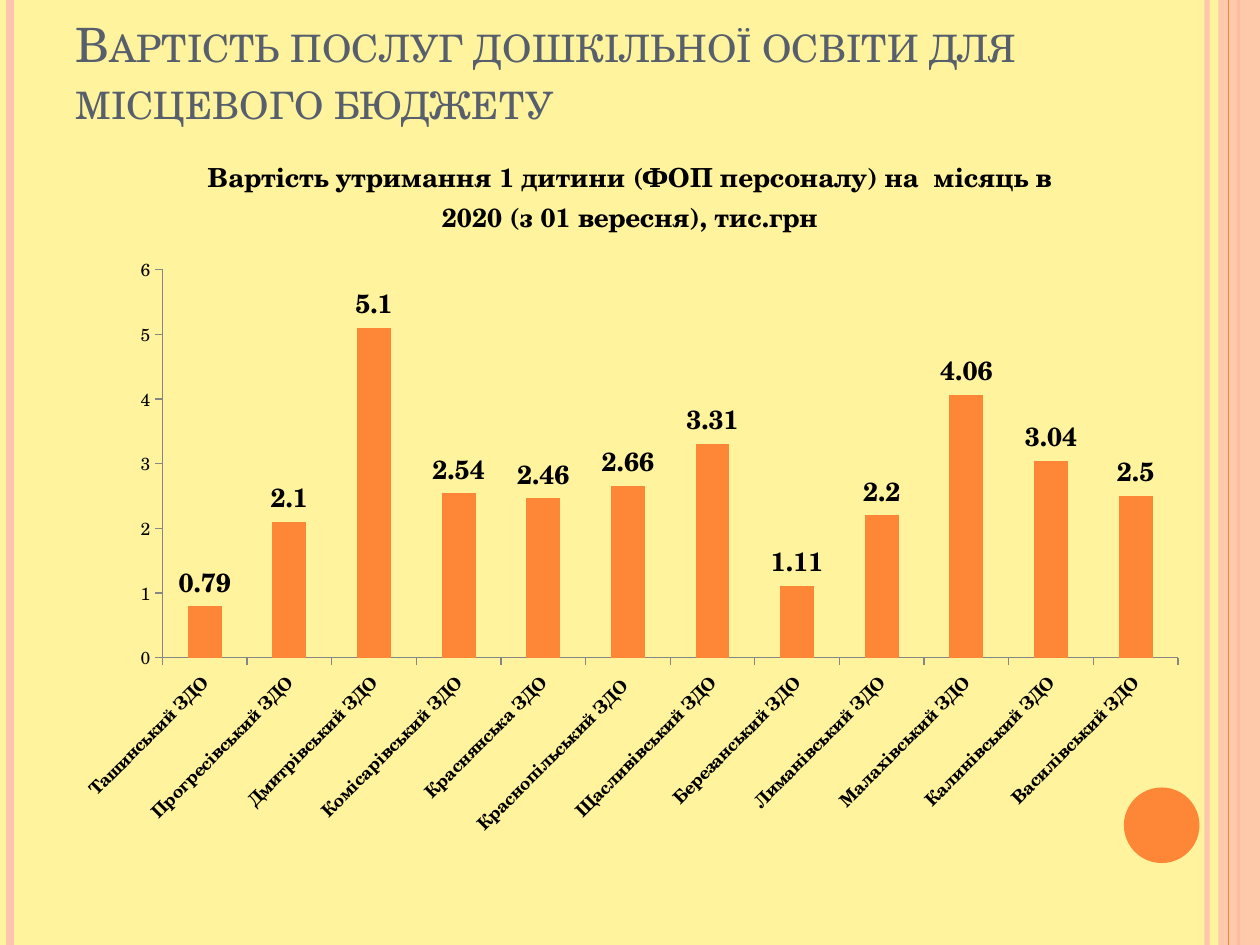
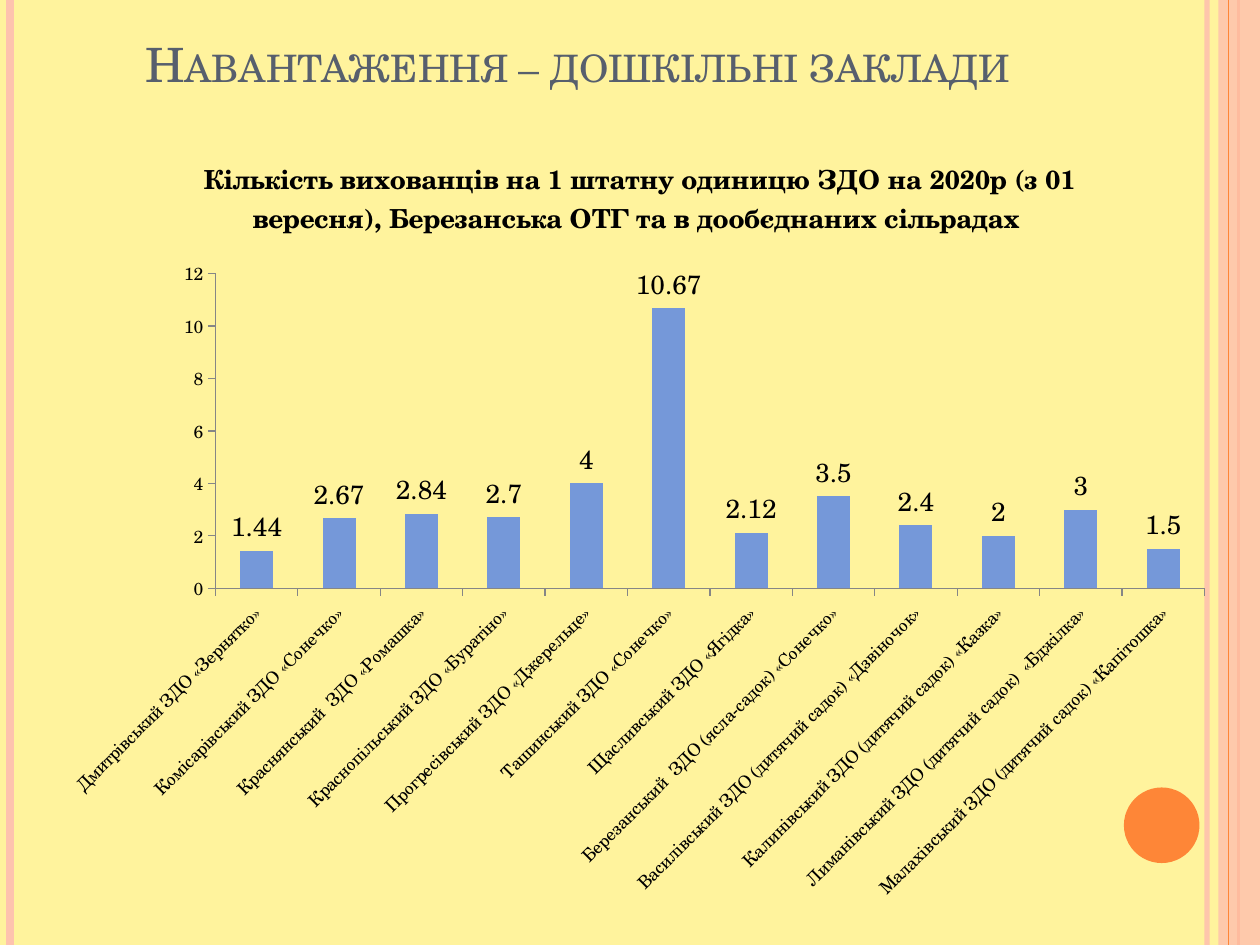
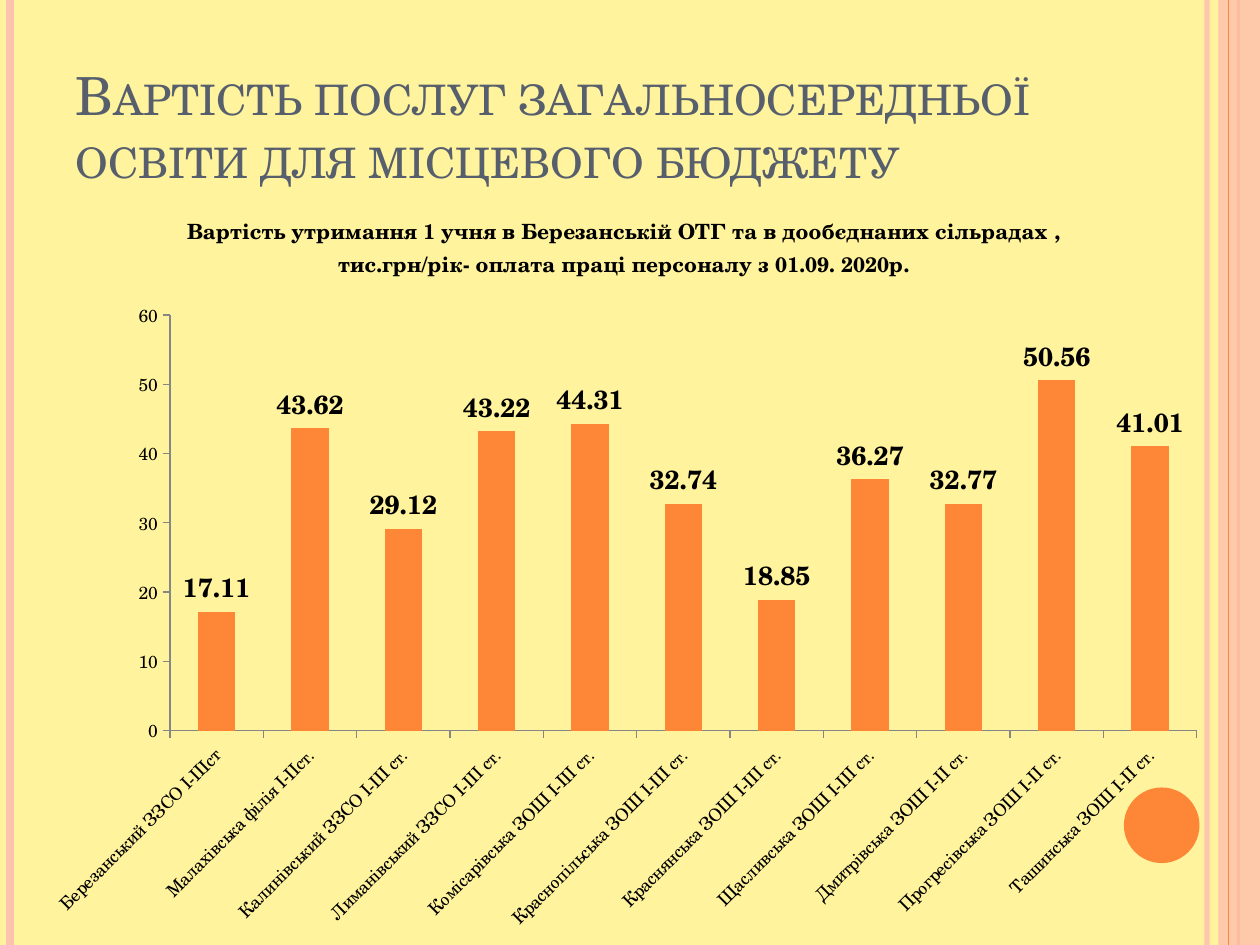
from lxml import etree
from pptx import Presentation
from pptx.chart.data import CategoryChartData
from pptx.dml.color import RGBColor
from pptx.enum.chart import XL_CHART_TYPE, XL_LABEL_POSITION, XL_TICK_MARK
from pptx.enum.shapes import MSO_CONNECTOR, MSO_SHAPE
from pptx.enum.text import MSO_ANCHOR, PP_ALIGN
from pptx.oxml import parse_xml
from pptx.oxml.ns import nsdecls, qn
from pptx.util import Inches, Pt

COLUMN = XL_CHART_TYPE.COLUMN_CLUSTERED
ABOVE = XL_LABEL_POSITION.OUTSIDE_END
TICK = XL_TICK_MARK.OUTSIDE
NONE = XL_TICK_MARK.NONE
LINE = MSO_CONNECTOR.STRAIGHT
RECT = MSO_SHAPE.RECTANGLE
OVAL = MSO_SHAPE.OVAL
BOTTOM = MSO_ANCHOR.BOTTOM
LEFT = PP_ALIGN.LEFT
CENTER = PP_ALIGN.CENTER

FONT = "TeX Gyre Schola"
WIDE, HIGH = 10, 7.5
HUES = {
    "page": "FFF39D",
    "peach": "FEC3AE",
    "orange": "FE8637",
    "blue": "7598D9",
    "title": "575F6D",
    "text": "000000",
    "axis": "868686",
}

COST = {
    "title": "Вартість послуг дошкільної освіти для місцевого бюджету",
    "size": 27, "align": LEFT, "head": (0.5, 0.3, 9.15, 0.77),
    "box": (0.47, 1.02, 9.06, 5.75), "plot": (1.29, 2.14, 8.06, 3.08),
    "name": "Вартість утримання 1 дитини (ФОП персоналу) на  місяць в 2020 (з 01 вересня), тис.грн",
    "name_size": 15, "hue": "orange", "top": 6, "step": 1,
    "bold_cats": True, "bold_vals": True,
    "data": {
        "Ташинський ЗДО": 0.79,
        "Прогресівський ЗДО": 2.1,
        "Дмитрівський ЗДО": 5.1,
        "Комісарівський ЗДО": 2.54,
        "Краснянська ЗДО": 2.46,
        "Краснопільський ЗДО ": 2.66,
        "Щасливівський ЗДО": 3.31,
        "Березанський ЗДО": 1.11,
        "Лиманівський ЗДО": 2.2,
        "Малахівський ЗДО": 4.06,
        "Калинівський ЗДО": 3.04,
        "Василівський ЗДО": 2.5,
    },
}
LOAD = {
    "title": "Навантаження – дошкільні заклади",
    "size": 27, "align": CENTER, "head": (0.5, 0.3, 8.17, 0.48),
    "box": (0.39, 1.02, 9.38, 6.25), "plot": (1.71, 2.17, 7.85, 2.5),
    "name": "Кількість вихованців на 1 штатну одиницю ЗДО на 2020р (з 01 вересня), "
            "Березанська ОТГ та в дообєднаних сільрадах ",
    "name_size": 15, "hue": "blue", "top": 12, "step": 2,
    "bold_cats": False, "bold_vals": False,
    "data": {
        "Дмитрівський ЗДО «Зернятко»": 1.44,
        "Комісарівський ЗДО «Сонечко»": 2.67,
        "Краснянський  ЗДО «Ромашка»": 2.84,
        "Краснопільський ЗДО «Буратіно»": 2.7,
        "Прогресівський ЗДО «Джерельце»": 4,
        "Ташинський ЗДО «Сонечко»": 10.67,
        "Щасливський ЗДО «Ягідка»": 2.12,
        "Березанський  ЗДО (ясла-садок) «Сонечко»": 3.5,
        "Василівський ЗДО (дитячий садок) «Дзвіночок»": 2.4,
        "Калинівський ЗДО (дитячий садок) «Казка»": 2,
        "Лиманівський ЗДО (дитячий садок)  «Бджілка»": 3,
        "Малахівський ЗДО (дитячий садок) «Капітошка»": 1.5,
    },
}
SCHOOL = {
    "title": "Вартість послуг загальносередньої освіти для місцевого бюджету",
    "size": 30, "align": LEFT, "head": (0.5, 0.3, 8.17, 1.25),
    "box": (0.23, 1.48, 9.45, 6.02), "plot": (1.35, 2.5, 8.15, 3.3),
    "name": "Вартість утримання 1 учня в Березанській ОТГ та в дообєднаних сільрадах , "
            "тис.грн/рік- оплата праці персоналу з 01.09. 2020р.",
    "name_size": 12, "hue": "orange", "top": 60, "step": 10,
    "bold_cats": False, "bold_vals": True,
    "data": {
        "Березанський ЗЗСО І-ІІІст": 17.11,
        "Малахівська філія І-ІІст.": 43.62,
        "Калинівський ЗЗСО І-ІІІ ст.": 29.12,
        "Лиманівський ЗЗСО І-ІІІ ст.": 43.22,
        "Комісарівська ЗОШ І-ІІІ ст.": 44.31,
        "Краснопільська ЗОШ І-ІІІ ст.": 32.74,
        "Краснянська ЗОШ І-ІІІ ст.": 18.85,
        "Щасливська ЗОШ І-ІІІ ст.": 36.27,
        "Дмитрівська ЗОШ І-ІІ ст.": 32.77,
        "Прогресівська ЗОШ І-ІІ ст.": 50.56,
        "Ташинська ЗОШ І-ІІ ст.": 41.01,
    },
}


def rgb(hue):
    return RGBColor.from_string(HUES[hue])


def inches(box):
    return [Inches(n) for n in box]


def style(font, size, hue="text", bold=False):
    font.name = FONT
    font.size = Pt(size)
    font.bold = bold
    font.color.rgb = rgb(hue)


def fade(shape, share):
    color = next(shape._element.spPr.iter(qn("a:srgbClr")))
    etree.SubElement(color, qn("a:alpha")).set("val", str(share * 1000))


def add_rule(slide, left, hue, width):
    rule = slide.shapes.add_connector(LINE, *inches((left, 0, left, HIGH)))
    rule.line.color.rgb = rgb(hue)
    rule.line.width = Pt(width)
    etree.SubElement(rule._element.spPr, qn("a:effectLst"))
    return rule


def add_solid(slide, kind, box, hue):
    shape = slide.shapes.add_shape(kind, *inches(box))
    shape.shadow.inherit = False
    shape.fill.solid()
    shape.fill.fore_color.rgb = rgb(hue)
    shape.line.fill.background()
    return shape


def add_frame(slide):
    slide.background.fill.solid()
    slide.background.fill.fore_color.rgb = rgb("page")
    fade(add_rule(slide, 9.58, "peach", 3), 93)
    add_rule(slide, 0.08, "peach", 4.5)
    add_rule(slide, 9.83, "orange", 1.5)
    fade(add_solid(slide, RECT, (9.67, 0, 0.33, HIGH), "peach"), 87)
    add_rule(slide, 9.75, "orange", 0.75)
    add_solid(slide, OVAL, (8.92, 6.25, 0.6, 0.6), "orange")


def add_title(slide, box, text, size, align):
    frame = slide.shapes.add_textbox(*inches(box)).text_frame
    frame.word_wrap = True
    frame.vertical_anchor = BOTTOM
    frame.text = text
    para = frame.paragraphs[0]
    para.alignment = align
    run = para.runs[0]
    style(run.font, size, "title")
    run.font._element.set("cap", "small")


def place_plot(chart, box, plot):
    left, top, wide, high = box
    parts = {
        "x": (plot[0] - left) / wide,
        "y": (plot[1] - top) / high,
        "w": plot[2] / wide,
        "h": plot[3] / high,
    }
    modes = '<c:layoutTarget val="inner"/><c:xMode val="edge"/><c:yMode val="edge"/>'
    sizes = "".join(f'<c:{key} val="{part:.4f}"/>' for key, part in parts.items())
    area = chart._chartSpace.chart.plotArea
    for old in area.findall(qn("c:layout")):
        area.remove(old)
    area.insert(0, parse_xml(
        f'<c:layout {nsdecls("c")}><c:manualLayout>{modes}{sizes}</c:manualLayout></c:layout>'))


def style_axis(axis, bold=False):
    axis.has_major_gridlines = False
    axis.major_tick_mark = TICK
    axis.minor_tick_mark = NONE
    axis.format.line.color.rgb = rgb("axis")
    axis.format.line.width = Pt(0.75)
    style(axis.tick_labels.font, 10, bold=bold)


def add_bars(slide, topic):
    data = CategoryChartData()
    data.categories = list(topic["data"])
    data.add_series(topic["name"], list(topic["data"].values()))
    box = topic["box"]
    chart = slide.shapes.add_chart(COLUMN, *inches(box), data).chart
    style(chart.font, 10)
    chart.has_legend = False
    chart.has_title = True
    frame = chart.chart_title.text_frame
    frame.text = topic["name"]
    style(frame.paragraphs[0].runs[0].font, topic["name_size"], bold=True)
    chart.chart_title.include_in_layout = False
    place_plot(chart, box, topic["plot"])

    cats, vals = chart.category_axis, chart.value_axis
    style_axis(cats, topic["bold_cats"])
    style_axis(vals)
    turn = cats._element.find(qn("c:txPr")).find(qn("a:bodyPr"))
    turn.set("rot", "-2700000")
    turn.set("vert", "horz")
    vals.minimum_scale = 0
    vals.maximum_scale = topic["top"]
    vals.major_unit = topic["step"]

    plot = chart.plots[0]
    plot.gap_width = 150
    plot.vary_by_categories = False
    bars = plot.series[0]
    bars.format.fill.solid()
    bars.format.fill.fore_color.rgb = rgb(topic["hue"])
    plot.has_data_labels = True
    labels = plot.data_labels
    labels.show_value = True
    labels.position = ABOVE
    style(labels.font, 15, bold=topic["bold_vals"])


def add_page(deck, topic):
    slide = deck.slides.add_slide(deck.slide_layouts[6])
    add_frame(slide)
    add_title(slide, topic["head"], topic["title"], topic["size"], topic["align"])
    add_bars(slide, topic)


def main():
    deck = Presentation()
    deck.slide_width = Inches(WIDE)
    deck.slide_height = Inches(HIGH)
    for topic in (COST, LOAD, SCHOOL):
        add_page(deck, topic)
    deck.save("out.pptx")


if __name__ == "__main__":
    main()
